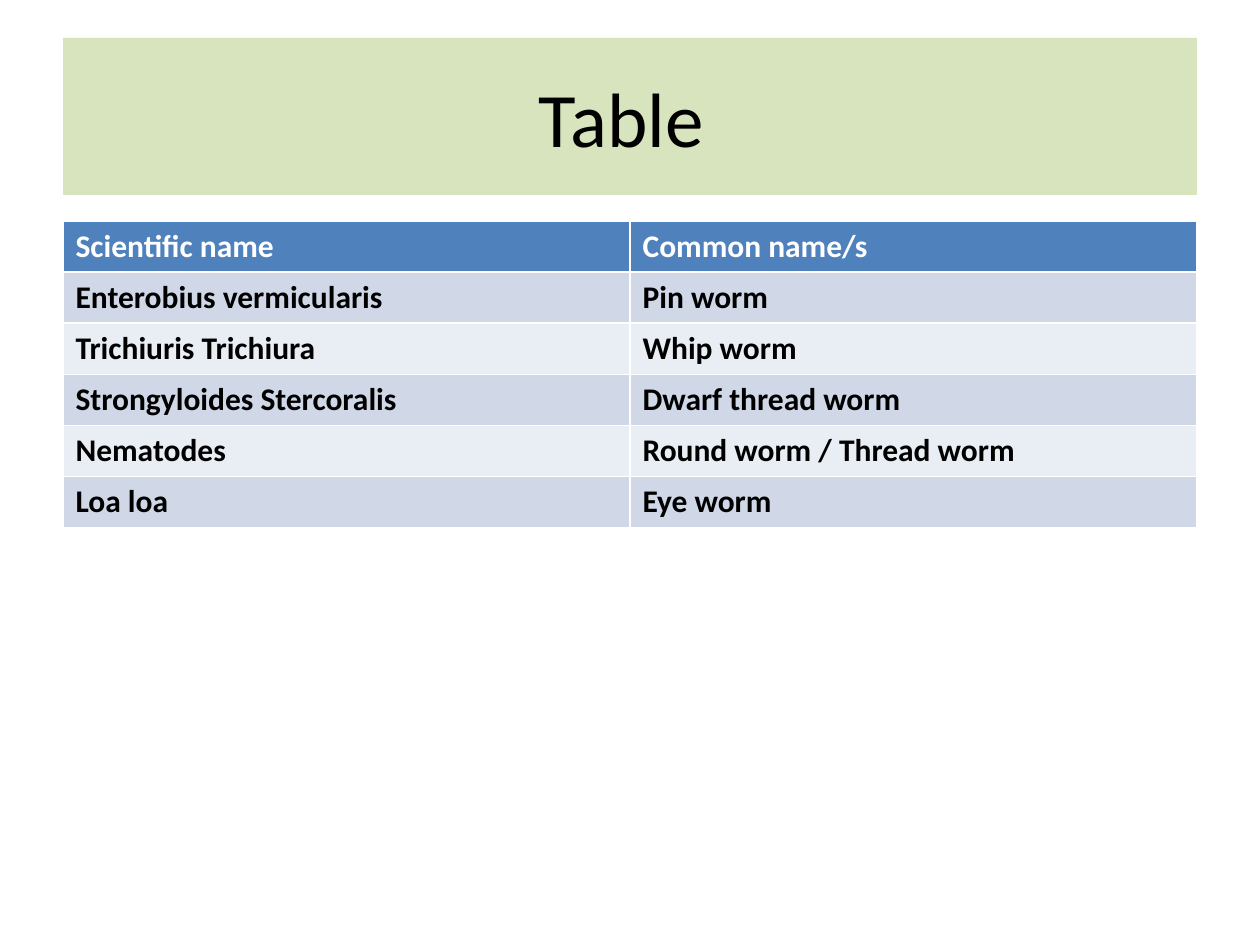
"""Builds a slide with a table of worm names."""
from typing import NamedTuple

from pptx import Presentation
from pptx import util as u
from pptx.dml.color import RGBColor
from pptx.enum import text

PX_PER_INCH = 126
LEFT, WIDTH = 63, 1134
TITLE_TOP, TITLE_HEIGHT = 38, 157
TABLE_TOP, ROW_HEIGHT = 221, 51
HEADER_FILL, BAND_FILLS = "4F81BD", ("D0D8E8", "E9EDF4")


class Worm(NamedTuple):
    """Scientific and common name of a worm."""
    scientific: str
    common: str


HEADINGS = Worm("Scientific name", "Common name/s")
WORMS = [
    Worm("Enterobius vermicularis", "Pin worm"),
    Worm("Trichiuris Trichiura", "Whip worm"),
    Worm("Strongyloides Stercoralis", "Dwarf thread worm"),
    Worm("Nematodes", "Round worm / Thread worm"),
    Worm("Loa loa", "Eye worm"),
]


def px(length: int) -> u.Emu:
    """Turn pixels into EMU."""
    return u.Emu(round(length * u.Inches(1) / PX_PER_INCH))


def paint(color_format, color: str) -> None:
    """Set a colour from a hex string."""
    color_format.rgb = RGBColor.from_string(color)


def fill_with(target, color: str) -> None:
    """Give a shape or cell a solid fill."""
    target.fill.solid()
    paint(target.fill.fore_color, color)


def write(frame, words: str, color: str, size: int, bold: bool) -> None:
    """Write one formatted line into a text frame."""
    frame.text = words
    font = frame.paragraphs[0].runs[0].font
    for name, value in {"name": "Calibri", "size": u.Pt(size), "bold": bold}.items():
        setattr(font, name, value)
    paint(font.color, color)


def draw_title(title) -> None:
    """Place and format the title placeholder."""
    box = {"left": LEFT, "top": TITLE_TOP, "width": WIDTH, "height": TITLE_HEIGHT}
    for name, value in box.items():
        setattr(title, name, px(value))
    fill_with(title, "D7E4BD")
    write(title.text_frame, "Table ", "000000", 44, False)
    title.text_frame.vertical_anchor = text.MSO_ANCHOR.MIDDLE
    title.text_frame.paragraphs[0].alignment = text.PP_ALIGN.CENTER


def draw_row(table, index: int, worm: Worm) -> None:
    """Fill one table row, the first as header."""
    header = index == 0
    fill = HEADER_FILL if header else BAND_FILLS[(index - 1) % 2]
    for cell, words in zip(table.rows[index].cells, worm):
        fill_with(cell, fill)
        write(cell.text_frame, words, "FFFFFF" if header else "000000", 18, True)


def main() -> None:
    """Build and save the slide."""
    deck = Presentation()
    deck.slide_width, deck.slide_height = px(1260), px(945)
    slide = deck.slides.add_slide(deck.slide_layouts[5])
    draw_title(slide.shapes.title)
    rows = [HEADINGS, *WORMS]
    table = slide.shapes.add_table(
        len(rows), len(HEADINGS), px(LEFT), px(TABLE_TOP),
        px(WIDTH), px(ROW_HEIGHT * len(rows))).table
    for index, worm in enumerate(rows):
        draw_row(table, index, worm)
    deck.save("out.pptx")


if __name__ == "__main__":
    main()
